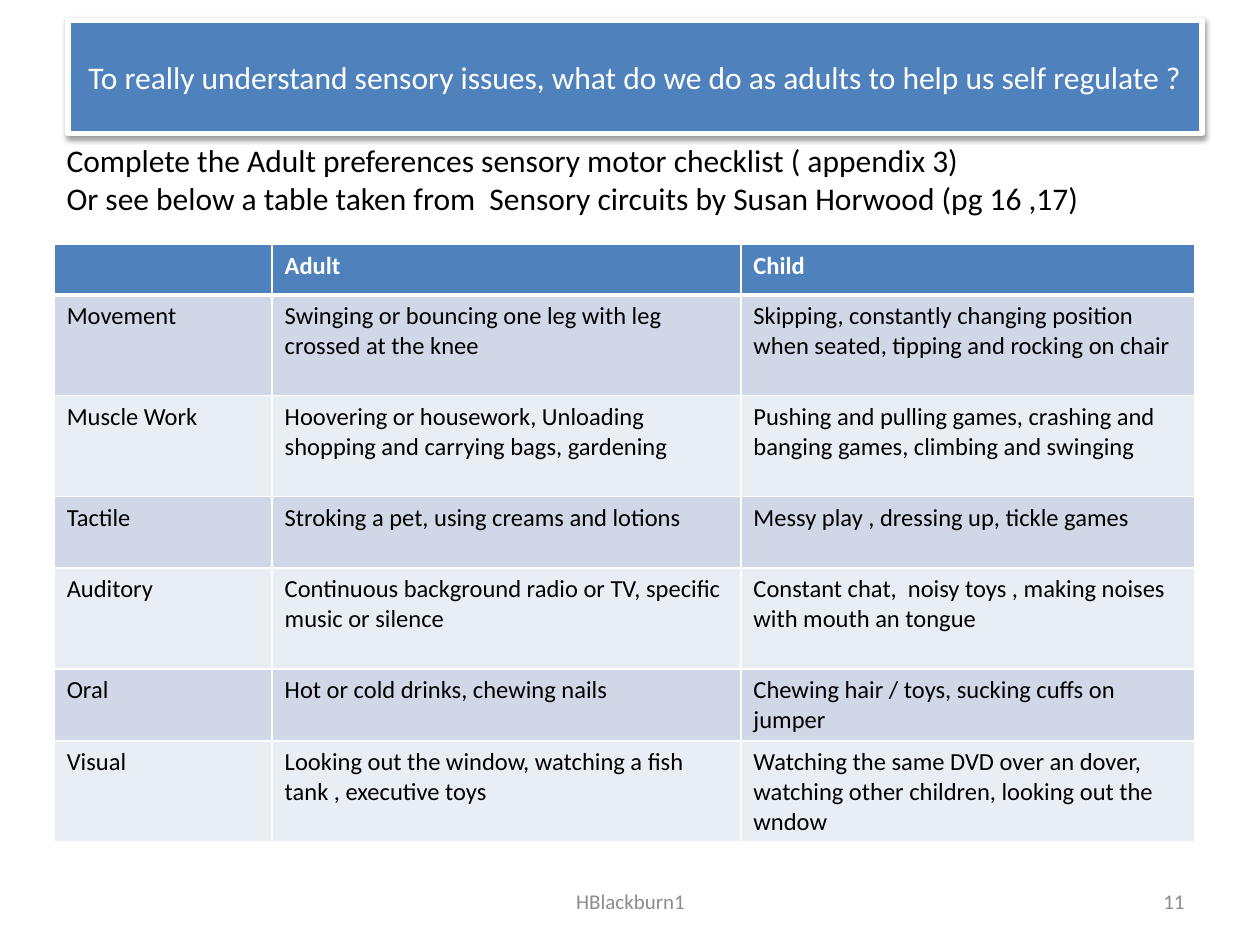
import dataclasses

import lxml.etree
import pptx
import pptx.dml.color
import pptx.enum.text
import pptx.oxml
import pptx.oxml.ns
import pptx.util

Inches = pptx.util.Inches
Pt = pptx.util.Pt
Align = pptx.enum.text.PP_ALIGN
Anchor = pptx.enum.text.MSO_ANCHOR


@dataclasses.dataclass(frozen=True)
class Theme:
    font: str = "Calibri"
    accent: str = "4F81BD"
    white: str = "FFFFFF"
    black: str = "000000"
    grey: str = "8C8C8C"
    bands: tuple = ("D0D8E8", "E9EDF4")
    heading_size: int = 18
    table_size: int = 14
    footer_size: int = 12


TITLE = ("To really understand sensory issues, what do we do as adults "
         "to help us self regulate ?")
INTRODUCTION = (
    "Complete the Adult preferences sensory motor checklist ( appendix 3)\n"
    "Or see below a table taken from  Sensory circuits by Susan Horwood (pg 16 ,17)"
)
ROWS = [
    ("", "Adult", "Child"),
    ("Movement", "Swinging or bouncing one leg with leg crossed at the knee",
     "Skipping, constantly changing position when seated, tipping and rocking on chair"),
    ("Muscle Work", "Hoovering or housework, Unloading shopping and carrying bags, gardening",
     "Pushing and pulling games, crashing and banging games, climbing and swinging"),
    ("Tactile", "Stroking a pet, using creams and lotions",
     "Messy play , dressing up, tickle games"),
    ("Auditory", "Continuous background radio or TV, specific music or silence",
     "Constant chat,  noisy toys , making noises with mouth an tongue"),
    ("Oral", "Hot or cold drinks, chewing nails",
     "Chewing hair / toys, sucking cuffs on jumper"),
    ("Visual", "Looking out the window, watching a fish tank , executive toys",
     "Watching the same DVD over an dover, watching other children, looking out the wndow"),
]
COLUMN_WIDTHS = (1.73, 3.72, 3.6)
ROW_HEIGHTS = (0.4, 0.8, 0.8, 0.57, 0.8, 0.57, 0.8)


def rgb(color):
    return pptx.dml.color.RGBColor.from_string(color)


def write_text(frame, text, *, font, size, color, bold=False, align=Align.LEFT):
    """Fill the frame with one paragraph per line of text."""
    frame.text = text
    for paragraph in frame.paragraphs:
        paragraph.alignment = align
        paragraph.font.size = Pt(size)
        for run in paragraph.runs:
            run.font.name = font
            run.font.size = Pt(size)
            run.font.bold = bold
            run.font.color.rgb = rgb(color)


def set_border(cell, side, color, width):
    """Draw one cell side (L, R, T or B); call in that order, before the fill."""
    properties = cell._tc.get_or_add_tcPr()
    line = lxml.etree.SubElement(
        properties, pptx.oxml.ns.qn(f"a:ln{side}"), w=str(Pt(width)))
    fill = lxml.etree.SubElement(line, pptx.oxml.ns.qn("a:solidFill"))
    lxml.etree.SubElement(fill, pptx.oxml.ns.qn("a:srgbClr"), val=color)


def add_shadow(shape, color, opacity, blur, distance):
    """Cast a soft shadow straight down, with blur and distance in points."""
    shape._element.spPr.append(pptx.oxml.parse_xml(
        f'<a:effectLst {pptx.oxml.ns.nsdecls("a")}>'
        f'<a:outerShdw blurRad="{Pt(blur)}" dist="{Pt(distance)}" dir="5400000" rotWithShape="0">'
        f'<a:srgbClr val="{color}"><a:alpha val="{opacity * 1000}"/></a:srgbClr>'
        '</a:outerShdw></a:effectLst>'))


class SlideBuilder:
    def __init__(self, slide, theme):
        self.slide = slide
        self.theme = theme

    def title(self, text, left, top, width, height):
        shape = self.slide.shapes.title
        shape.left, shape.top = Inches(left), Inches(top)
        shape.width, shape.height = Inches(width), Inches(height)
        shape.fill.solid()
        shape.fill.fore_color.rgb = rgb(self.theme.accent)
        shape.line.color.rgb = rgb(self.theme.white)
        shape.line.width = Pt(3)
        add_shadow(shape, self.theme.black, opacity=38, blur=3.1, distance=1.6)
        shape.text_frame.vertical_anchor = Anchor.MIDDLE
        write_text(shape.text_frame, text, font=self.theme.font,
                   size=self.theme.heading_size, color=self.theme.white, align=Align.CENTER)

    def text_box(self, text, left, top, width, height, *, anchor=Anchor.TOP, **text_format):
        shape = self.slide.shapes.add_textbox(
            Inches(left), Inches(top), Inches(width), Inches(height))
        shape.text_frame.word_wrap = True
        shape.text_frame.vertical_anchor = anchor
        write_text(shape.text_frame, text, font=self.theme.font, **text_format)

    def footer(self, text, left, width, align):
        self.text_box(text, left, 6.95, width, 0.4, anchor=Anchor.MIDDLE, align=align,
                      size=self.theme.footer_size, color=self.theme.grey)

    def table(self, rows, left, top, column_widths, row_heights):
        table = self.slide.shapes.add_table(
            len(rows), len(column_widths), Inches(left), Inches(top),
            Inches(sum(column_widths)), Inches(sum(row_heights))).table
        for column, width in zip(table.columns, column_widths):
            column.width = Inches(width)
        for row, height in zip(table.rows, row_heights):
            row.height = Inches(height)
        for row_index, texts in enumerate(rows):
            for column_index, text in enumerate(texts):
                self.table_cell(table.cell(row_index, column_index), text, row_index)

    def table_cell(self, cell, text, row_index):
        theme = self.theme
        header = row_index == 0
        border_widths = {"L": 1, "R": 1, "T": 3 if row_index == 1 else 1, "B": 3 if header else 1}
        for side, width in border_widths.items():
            set_border(cell, side, theme.white, width)
        cell.fill.solid()
        cell.fill.fore_color.rgb = rgb(theme.accent if header else theme.bands[(row_index - 1) % 2])
        write_text(cell.text_frame, text, font=theme.font, size=theme.table_size, bold=header,
                   color=theme.white if header else theme.black)


def main():
    presentation = pptx.Presentation()
    presentation.slide_width, presentation.slide_height = Inches(10), Inches(7.5)
    title_only = presentation.slide_layouts.get_by_name("Title Only")
    theme = Theme()
    builder = SlideBuilder(presentation.slides.add_slide(title_only), theme)
    builder.title(TITLE, 0.54, 0.16, 9, 0.9)
    builder.text_box(INTRODUCTION, 0.43, 1.07, 9.21, 0.71,
                     size=theme.heading_size, color=theme.black)
    builder.table(ROWS, 0.43, 1.94, COLUMN_WIDTHS, ROW_HEIGHTS)
    builder.footer("HBlackburn1", 3.42, 3.17, Align.CENTER)
    builder.footer("11", 7.17, 2.33, Align.RIGHT)
    presentation.save("out.pptx")


if __name__ == "__main__":
    main()
